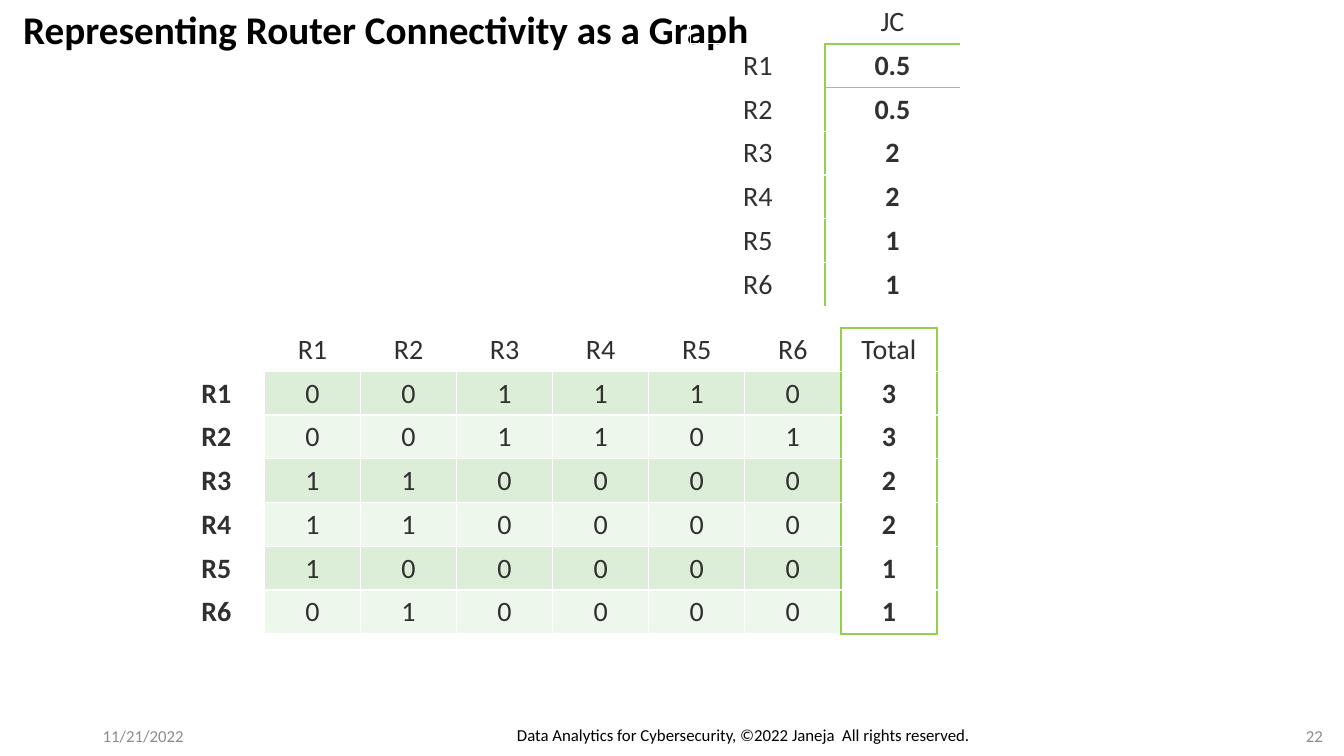
from lxml.etree import SubElement
from pptx import Presentation
from pptx.dml.color import RGBColor
from pptx.enum.text import MSO_ANCHOR, MSO_AUTO_SIZE, PP_ALIGN
from pptx.oxml.ns import qn
from pptx.util import Inches, Pt

TITLE = "Representing Router Connectivity as a Graph"
ROUTERS = ["R1", "R2", "R3", "R4", "R5", "R6"]
LINKS = ["001110", "001101", "110000", "110000", "100000", "010000"]
TOTALS = ["3", "3", "2", "2", "1", "1"]
JC_VALUES = ["0.5", "0.5", "2", "2", "1", "1"]
FOOTERS = [
    ("11/21/2022", (0.92, 7.1, 1.01, 0.4), PP_ALIGN.LEFT, MSO_ANCHOR.MIDDLE, "8C8C8C"),
    ("Data Analytics for Cybersecurity, ©2022 Janeja  All rights reserved.",
     (4.91, 7.04, 4.93, 0.4), PP_ALIGN.CENTER, MSO_ANCHOR.BOTTOM, "000000"),
    ("22", (10.22, 7.1, 3, 0.4), PP_ALIGN.RIGHT, MSO_ANCHOR.MIDDLE, "8C8C8C"),
]
GREEN, WHITE, INK = "92D050", "FFFFFF", "303030"
BANDS = ["DCEED7", "EEF7EC"]
ROW_HEIGHT = 3.03 / 7
MATRIX_LEFT, MATRIX_TOP, MATRIX_COLUMN = 1.67, 3.25, 6.67 / 7

MATRIX = [["", *ROUTERS]] + [[router, *links] for router, links in zip(ROUTERS, LINKS)]
TOTAL = [["Total"]] + [[total] for total in TOTALS]
JC = [["", "JC"]] + [list(pair) for pair in zip(ROUTERS, JC_VALUES)]


def rgb(color):
    return RGBColor.from_string(color)


def style(paragraph, size, color, align, bold=False):
    paragraph.alignment = align
    font = paragraph.font
    font.name, font.size, font.bold = "Calibri", Pt(size), bold
    font.color.rgb = rgb(color)


def draw_border(cell, side, color, width):
    line = SubElement(cell._tc.get_or_add_tcPr(), qn(f"a:ln{side}"), w=str(Pt(width)))
    fill = SubElement(line, qn("a:solidFill"))
    SubElement(fill, qn("a:srgbClr"), val=color)


def add_grid(slide, rows, left, top, column, is_green, is_bold, band=None):
    columns = len(rows[0])
    table = slide.shapes.add_table(
        len(rows), columns, Inches(left), Inches(top),
        Inches(column * columns), Inches(ROW_HEIGHT * len(rows))).table
    table.first_row = table.horz_banding = False
    for table_column in table.columns:
        table_column.width = Inches(column)
    for r, row in enumerate(rows):
        table.rows[r].height = Inches(ROW_HEIGHT)
        for c, value in enumerate(row):
            cell = table.cell(r, c)
            for side in "LRTB":
                green = is_green(r, c, side)
                draw_border(cell, side, GREEN if green else WHITE, 1.5 if green else 1)
            if band and r and c:
                cell.fill.solid()
                cell.fill.fore_color.rgb = rgb(band[(r - 1) % 2])
            else:
                cell.fill.background()
            cell.text = value
            style(cell.text_frame.paragraphs[0], 20, INK, PP_ALIGN.CENTER, is_bold(r, c))


def total_edge(r, c, side):
    return side in "LR" or (r, side) in [(0, "T"), (len(ROUTERS), "B")]


def jc_edge(r, c, side):
    beside_values = r > 0 and (c, side) in [(0, "R"), (1, "L")]
    around_first = c == 1 and (r, side) in [(0, "B"), (1, "T"), (1, "B"), (2, "T")]
    return beside_values or around_first


def main():
    deck = Presentation()
    deck.slide_width, deck.slide_height = Inches(13.33), Inches(7.5)
    slide = deck.slides.add_slide(deck.slide_layouts[5])

    add_grid(slide, MATRIX, MATRIX_LEFT, MATRIX_TOP, MATRIX_COLUMN,
             lambda r, c, side: False, lambda r, c: r > 0 and c == 0, BANDS)
    add_grid(slide, TOTAL, MATRIX_LEFT + 7 * MATRIX_COLUMN, MATRIX_TOP, MATRIX_COLUMN,
             total_edge, lambda r, c: r > 0)
    add_grid(slide, JC, 6.85, 0, 2.67 / 2, jc_edge, lambda r, c: r > 0 and c == 1)

    title = slide.shapes.title
    title.left, title.top, title.width, title.height = map(Inches, (0.13, 0, 7.49, 0.57))
    title.text = TITLE
    title.text_frame.word_wrap = False
    title.text_frame.auto_size = MSO_AUTO_SIZE.SHAPE_TO_FIT_TEXT
    title.text_frame.vertical_anchor = MSO_ANCHOR.TOP
    style(title.text_frame.paragraphs[0], 28, "000000", PP_ALIGN.LEFT, True)

    for words, place, align, anchor, color in FOOTERS:
        frame = slide.shapes.add_textbox(*map(Inches, place)).text_frame
        frame.word_wrap = True
        frame.vertical_anchor = anchor
        frame.text = words
        style(frame.paragraphs[0], 12, color, align)

    deck.save("out.pptx")


if __name__ == "__main__":
    main()
